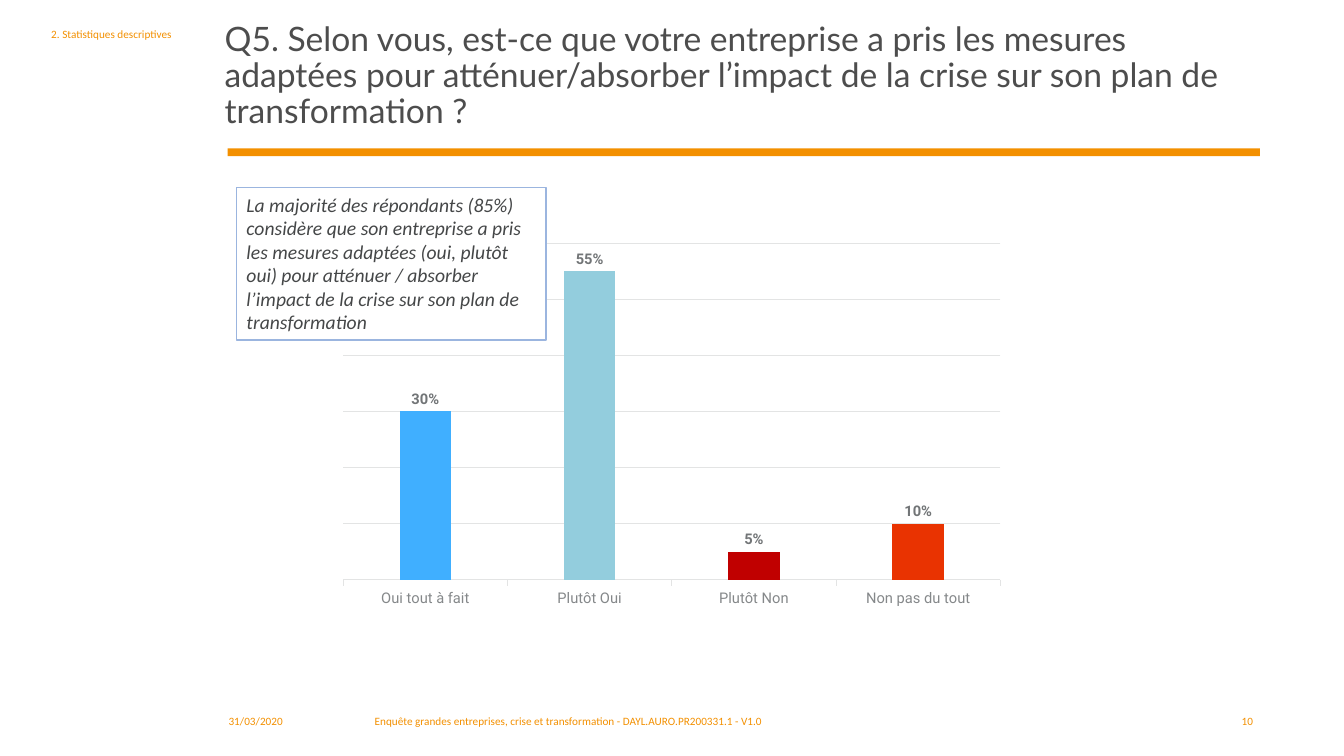
from pptx import Presentation
from pptx.chart.data import CategoryChartData
from pptx.dml.color import RGBColor
from pptx.enum.chart import XL_CHART_TYPE, XL_LABEL_POSITION, XL_TICK_LABEL_POSITION, XL_TICK_MARK
from pptx.enum.shapes import MSO_SHAPE
from pptx.enum.text import MSO_ANCHOR, PP_ALIGN
from pptx.util import Pt

RECT = MSO_SHAPE.RECTANGLE
COLUMN = XL_CHART_TYPE.COLUMN_CLUSTERED
OUTER = XL_LABEL_POSITION.OUTSIDE_END
LOW = XL_TICK_LABEL_POSITION.LOW
OUT, NONE = XL_TICK_MARK.OUTSIDE, XL_TICK_MARK.NONE
TOP, BASE = MSO_ANCHOR.TOP, MSO_ANCHOR.BOTTOM
LEFT, RIGHT = PP_ALIGN.LEFT, PP_ALIGN.RIGHT

ORANGE, DARK, INK = "F39000", "4D4D4D", "454748"
GRID, WHITE, BLUE = "E3E4E4", "FFFFFF", "9BB5DF"


def rgb(code):
    return RGBColor.from_string(code)


def style(font, face="Calibri", size=8, color=ORANGE, bold=False, italic=False):
    font.name, font.size = face, Pt(size)
    font.bold, font.italic = bold, italic
    font.color.rgb = rgb(color)


def write(frame, text, align=LEFT, anchor=TOP, space=None, **look):
    frame.word_wrap = True
    frame.vertical_anchor = anchor
    para = frame.paragraphs[0]
    para.alignment = align
    if space:
        para.line_spacing = space
    run = para.add_run()
    run.text = text
    style(run.font, **look)


class Page:
    def __init__(self, deck):
        self.shapes = deck.slides.add_slide(deck.slide_layouts[6]).shapes

    def text(self, box, text, **look):
        write(self.shapes.add_textbox(*map(Pt, box)).text_frame, text, **look)

    def rect(self, box, fill, edge=None):
        shape = self.shapes.add_shape(RECT, *map(Pt, box))
        shape.shadow.inherit = False
        shape.fill.solid()
        shape.fill.fore_color.rgb = rgb(fill)
        if edge:
            shape.line.color.rgb = rgb(edge)
            shape.line.width = Pt(1)
        else:
            shape.line.fill.background()
        return shape

    def chart(self, box, bars):
        data = CategoryChartData(number_format="0%")
        data.categories = [name for name, _, _ in bars]
        data.add_series("Series 1", [share for _, share, _ in bars])
        chart = self.shapes.add_chart(COLUMN, *map(Pt, box), data).chart
        chart.has_legend = chart.has_title = False
        style(chart.font, "Roboto", 10, INK)

        # Axes
        cat, val = chart.category_axis, chart.value_axis
        cat.major_tick_mark, cat.minor_tick_mark = OUT, NONE
        cat.tick_label_position = LOW
        style(cat.tick_labels.font, "Roboto", 10.5, "85888A")
        val.visible = False
        val.minimum_scale, val.maximum_scale, val.major_unit = 0, 0.6, 0.1
        val.has_major_gridlines = True
        for line in (cat.format.line, val.major_gridlines.format.line):
            line.color.rgb = rgb(GRID)
            line.width = Pt(0.75)

        # Columns and their labels
        plot = chart.plots[0]
        plot.gap_width, plot.overlap = 219, -27
        plot.vary_by_categories = False
        series = plot.series[0]
        series.invert_if_negative = False
        series.format.fill.solid()
        series.format.fill.fore_color.rgb = rgb(ORANGE)
        for i, (_, _, color) in enumerate(bars):
            fill = series.points[i].format.fill
            fill.solid()
            fill.fore_color.rgb = rgb(color)
        labels = series.data_labels
        labels.show_value = True
        labels.position = OUTER
        labels.number_format, labels.number_format_is_linked = "0%", False
        style(labels.font, "Roboto", 10.5, "727577", bold=True)


def main():
    deck = Presentation()
    deck.slide_width, deck.slide_height = Pt(960), Pt(540)
    page = Page(deck)

    # Heading
    page.rect((162.7, 106, 737.3, 5.5), ORANGE)
    page.text((153.4, 15.8, 746.6, 81.4),
              "Q5. Selon vous, est-ce que votre entreprise a pris les mesures adaptées pour "
              "atténuer/absorber l’impact de la crise sur son plan de transformation ?",
              face="Lato", size=24, color=DARK, anchor=BASE, space=0.9)
    page.text((29.5, 15.8, 121.7, 98.6), "2. Statistiques descriptives")

    # Footer
    for left, width, text, align in (
            (156.2, 102.2, "31/03/2020", LEFT),
            (260.6, 393.8, "Enquête grandes entreprises, crise et transformation"
                           " - DAYL.AURO.PR200331.1 - V1.0", LEFT),
            (814.3, 87.8, "10", RIGHT)):
        page.text((left, 507, width, 26), text, align=align)

    # Answers
    page.chart((235.4, 168.5, 489, 270), (
        ("Oui tout à fait", 0.3, "40AFFF"),
        ("Plutôt Oui", 0.55, "93CDDD"),
        ("Plutôt Non", 0.05, "C00000"),
        ("Non pas du tout", 0.1, "E93301")))

    # Key finding
    note = page.rect((169, 134, 221, 109), WHITE, BLUE)
    write(note.text_frame,
          "La majorité des répondants (85%) considère que son entreprise a pris les mesures "
          "adaptées (oui, plutôt oui) pour atténuer / absorber l’impact de la crise sur son "
          "plan de transformation", size=14, color=INK, italic=True)

    deck.save("out.pptx")


if __name__ == "__main__":
    main()
